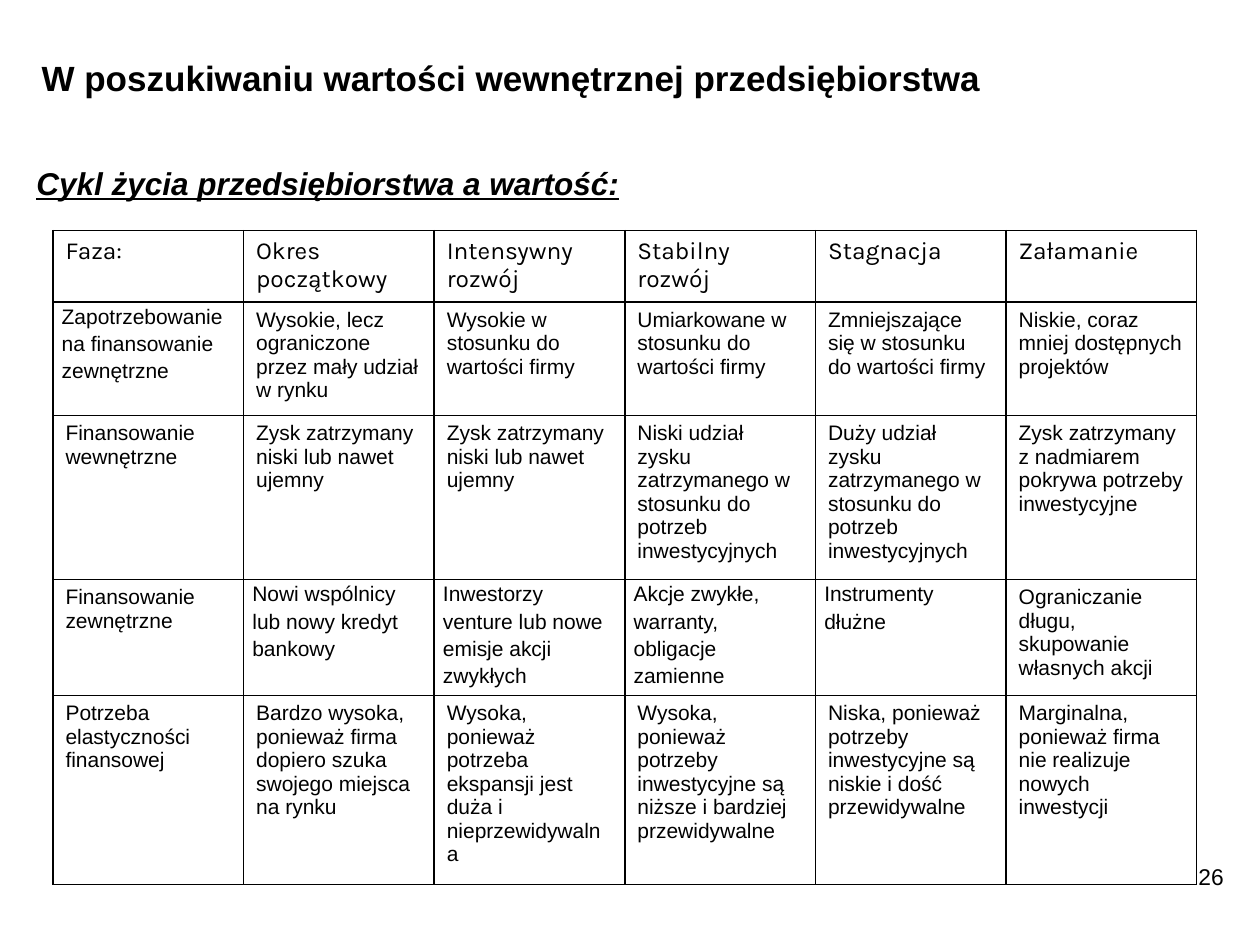
"""Build the slide on the company life cycle and its value."""
from lxml import etree
from pptx import Presentation
from pptx.dml.color import RGBColor
from pptx.enum.text import MSO_ANCHOR, PP_ALIGN
from pptx.oxml.ns import qn
from pptx.util import Inches, Pt

LEFT, RIGHT = PP_ALIGN.LEFT, PP_ALIGN.RIGHT
TOP, MIDDLE = MSO_ANCHOR.TOP, MSO_ANCHOR.MIDDLE
COLORS = {"ink": "000000", "paper": "FFFFFF"}

TITLE = "W poszukiwaniu wartości wewnętrznej przedsiębiorstwa"
HEADING = "Cykl życia przedsiębiorstwa a wartość:"
NUMBER = "26"
ROWS = [
    ["Faza:", "Okres początkowy", "Intensywny rozwój", "Stabilny rozwój",
     "Stagnacja", "Załamanie"],
    ["Zapotrzebowanie na finansowanie zewnętrzne",
     "Wysokie, lecz ograniczone przez mały udział w rynku",
     "Wysokie w stosunku do wartości firmy",
     "Umiarkowane w stosunku do wartości firmy",
     "Zmniejszające się w stosunku do wartości firmy",
     "Niskie, coraz mniej dostępnych projektów"],
    ["Finansowanie wewnętrzne",
     "Zysk zatrzymany niski lub nawet ujemny",
     "Zysk zatrzymany niski lub nawet ujemny",
     "Niski udział zysku zatrzymanego w stosunku do potrzeb inwestycyjnych",
     "Duży udział zysku zatrzymanego w stosunku do potrzeb inwestycyjnych",
     "Zysk zatrzymany z nadmiarem pokrywa potrzeby inwestycyjne"],
    ["Finansowanie zewnętrzne",
     "Nowi wspólnicy lub nowy kredyt bankowy",
     "Inwestorzy venture lub nowe emisje akcji zwykłych",
     "Akcje zwykłe, warranty, obligacje zamienne",
     "Instrumenty dłużne",
     "Ograniczanie długu, skupowanie własnych akcji"],
    ["Potrzeba elastyczności finansowej",
     "Bardzo wysoka, ponieważ firma dopiero szuka swojego miejsca na rynku",
     "Wysoka, ponieważ potrzeba ekspansji jest duża i nieprzewidywalna",
     "Wysoka, ponieważ potrzeby inwestycyjne są niższe i bardziej przewidywalne",
     "Niska, ponieważ potrzeby inwestycyjne są niskie i dość przewidywalne",
     "Marginalna, ponieważ firma nie realizuje nowych inwestycji"],
]
HEIGHTS = [0.55, 0.84, 1.22, 0.86, 1.4]
WIDTH = 9.08
LOOSE = {(1, 0), (3, 1), (3, 2), (3, 3), (3, 4)}


def write(frame, text, size=12, font="Arial", bold=False, italic=False,
          line=False, align=LEFT, space=None):
    """Put one formatted paragraph in a text frame."""
    frame.word_wrap = True
    para = frame.paragraphs[0]
    para.alignment = align
    if space:
        para.line_spacing = space
    run = para.add_run()
    run.text = text
    face = run.font
    face.name, face.size = font, Pt(size)
    face.bold, face.italic, face.underline = bold, italic, line
    face.color.rgb = RGBColor.from_string(COLORS["ink"])


def place(shape, left, top, width, height):
    """Set the position and size of a shape."""
    shape.left, shape.top = Inches(left), Inches(top)
    shape.width, shape.height = Inches(width), Inches(height)


def border(cell):
    """Draw a thin line on each side of a cell."""
    props = cell._tc.get_or_add_tcPr()
    for spot, side in enumerate(("lnL", "lnR", "lnT", "lnB")):
        edge = etree.Element(qn(f"a:{side}"), w=str(Pt(1)))
        fill = etree.SubElement(edge, qn("a:solidFill"))
        etree.SubElement(fill, qn("a:srgbClr"), val=COLORS["ink"])
        props.insert(spot, edge)


def add_grid(slide):
    """Add the table of life cycle phases."""
    count = len(ROWS[0])
    frame = slide.shapes.add_table(
        len(ROWS), count, Inches(0.42), Inches(1.83),
        Inches(WIDTH), Inches(sum(HEIGHTS)))
    grid = frame.table
    for col in grid.columns:
        col.width = Inches(WIDTH / count)
    for r, row in enumerate(ROWS):
        grid.rows[r].height = Inches(HEIGHTS[r])
        for c, text in enumerate(row):
            cell = grid.cell(r, c)
            cell.fill.solid()
            cell.fill.fore_color.rgb = RGBColor.from_string(COLORS["paper"])
            border(cell)
            loose = (r, c) in LOOSE
            cell.vertical_anchor = TOP
            cell.margin_left = cell.margin_right = Inches(0.07 if loose else 0.1)
            cell.margin_top = cell.margin_bottom = Inches(0 if loose else 0.05)
            head = r == 0
            write(cell.text_frame, text, size=14 if head else 12,
                  font="Karla" if head else "Arial",
                  space=1.15 if loose else None)


def main():
    """Build and save the slide."""
    deck = Presentation()
    deck.slide_width, deck.slide_height = Inches(10), Inches(7.5)
    slide = deck.slides.add_slide(deck.slide_layouts[5])
    title = slide.shapes.title
    place(title, 0.23, 0.15, 8.03, 0.93)
    title.text_frame.vertical_anchor = MIDDLE
    write(title.text_frame, TITLE, size=20, bold=True)
    boxes = [
        (HEADING, (0.19, 1.25, 9.61, 0.45),
         {"size": 18, "bold": True, "italic": True, "line": True}),
        (NUMBER, (7.73, 6.8, 2.08, 0.5), {"size": 13, "align": RIGHT}),
    ]
    for text, spot, style in boxes:
        box = slide.shapes.add_textbox(*map(Inches, spot))
        write(box.text_frame, text, **style)
    add_grid(slide)
    deck.save("out.pptx")


if __name__ == "__main__":
    main()
